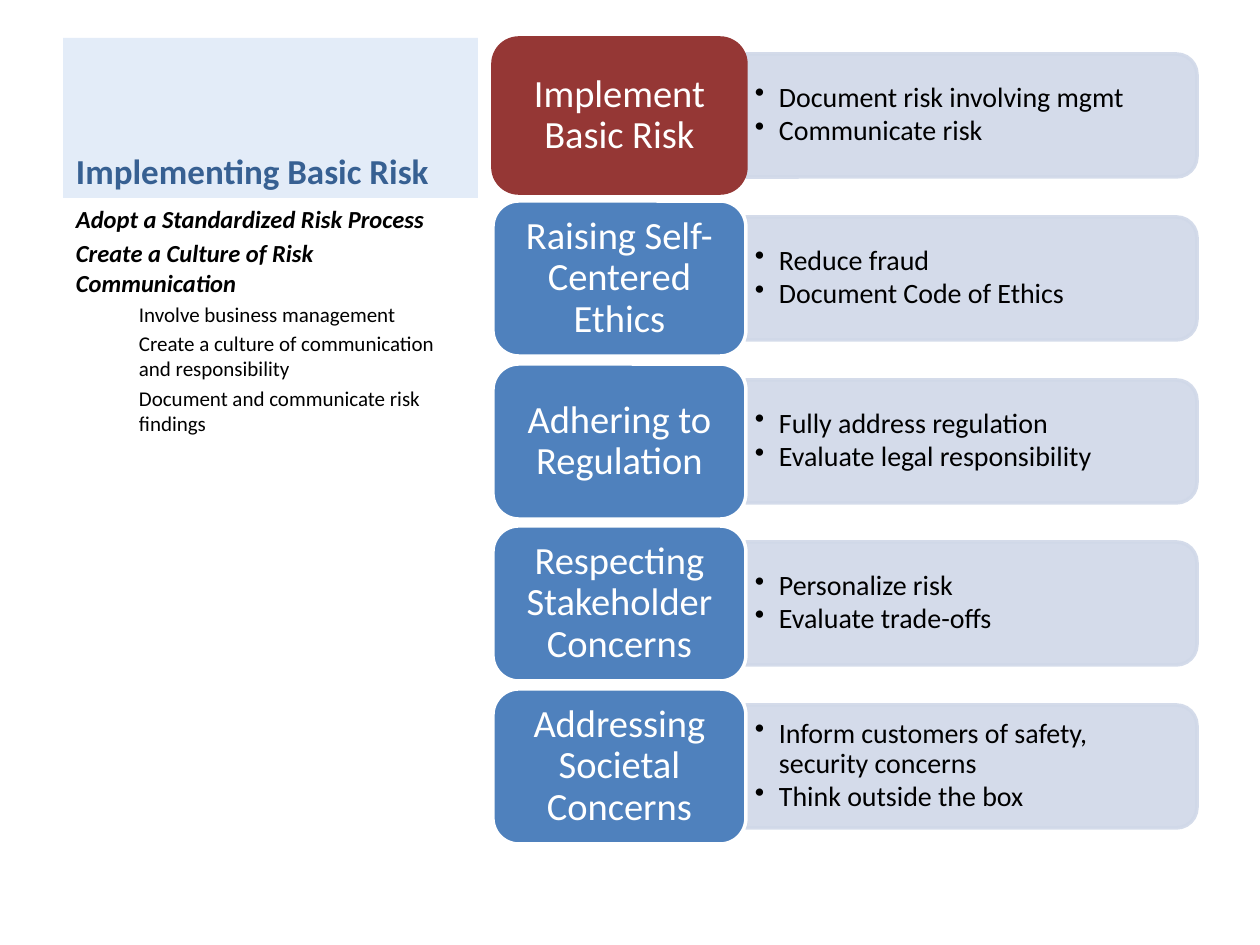
import pptx
import pptx.dml.color
import pptx.enum.shapes
import pptx.enum.text
import pptx.oxml.ns
import pptx.oxml.xmlchemy
import pptx.util

COLOURS = {
    "title_fill": "E3ECF8", "title": "376092", "panel": "D0D8E8",
    "active": "953735", "step": "4F81BD", "white": "FFFFFF", "black": "000000",
}
TITLE = "Implementing Basic Risk"
STEPS = [
    ("Implement Basic Risk", ["Document risk involving mgmt", "Communicate risk"]),
    ("Raising Self-Centered Ethics", ["Reduce fraud", "Document Code of Ethics"]),
    ("Adhering to Regulation", ["Fully address regulation", "Evaluate legal responsibility"]),
    ("Respecting Stakeholder Concerns", ["Personalize risk", "Evaluate trade-offs"]),
    ("Addressing Societal Concerns",
     ["Inform customers of safety, security concerns", "Think outside the box"]),
]
HEADINGS = ["Adopt a Standardized Risk Process", "Create a Culture of Risk Communication"]
DETAILS = [
    "Involve business management",
    "Create a culture of communication and responsibility",
    "Document and communicate risk findings",
]
ROW_TOP, ROW_PITCH = 38, 162.8
LABEL_LEFT, LABEL_WIDTH, LABEL_HEIGHT = 493, 253, 155
PANEL_LEFT, PANEL_WIDTH, PANEL_HEIGHT = 746, 451, 123


def px(length):
    return pptx.util.Emu(round(length * 914400 / 126))


def rgb(name):
    return pptx.dml.color.RGBColor.from_string(COLOURS[name])


def add_element(parent, tag, attribute, value):
    element = pptx.oxml.xmlchemy.OxmlElement(tag)
    element.set(attribute, value)
    parent.append(element)


class SlideBuilder:
    font = "Calibri"

    def __init__(self, slide):
        self.slide = slide

    def format_text(self, paragraph, size, colour, bold=False, italic=False):
        for run in paragraph.runs:
            font = run.font
            font.name, font.size = self.font, pptx.util.Pt(size)
            font.bold, font.italic = bold, italic
            font.color.rgb = rgb(colour)

    def set_frame(self, frame, anchor, margins):
        frame.word_wrap = True
        frame.auto_size = pptx.enum.text.MSO_AUTO_SIZE.NONE
        frame.vertical_anchor = anchor
        frame.margin_left = frame.margin_right = px(margins[0])
        frame.margin_top = frame.margin_bottom = px(margins[1])

    def title(self, text, left, top, width, height):
        shape = self.slide.shapes.title
        shape.left, shape.top = px(left), px(top)
        shape.width, shape.height = px(width), px(height)
        shape.fill.solid()
        shape.fill.fore_color.rgb = rgb("title_fill")
        frame = shape.text_frame
        frame.text = text
        self.set_frame(frame, pptx.enum.text.MSO_ANCHOR.BOTTOM, (13, 6))
        frame.paragraphs[0].alignment = pptx.enum.text.PP_ALIGN.LEFT
        self.format_text(frame.paragraphs[0], 20, "title", bold=True)

    def shape(self, kind, left, top, width, height, fill, line):
        shape = self.slide.shapes.add_shape(kind, px(left), px(top), px(width), px(height))
        shape.shadow.inherit = False
        shape.fill.solid()
        shape.fill.fore_color.rgb = rgb(fill)
        shape.line.color.rgb = rgb(line)
        shape.line.width = pptx.util.Pt(2)
        return shape

    def panel(self, left, top, width, height):
        # The rounded end faces right, so the shape is laid out upright and turned
        shape = self.shape(pptx.enum.shapes.MSO_SHAPE.ROUND_2_SAME_RECTANGLE,
                           left + (width - height) / 2, top + (height - width) / 2,
                           height, width, "panel", "panel")
        shape.rotation = 90
        for colour in list(shape._element.spPr.iter(pptx.oxml.ns.qn("a:srgbClr"))):
            add_element(colour, "a:alpha", "val", "90000")

    def label(self, text, left, top, width, height, fill, line):
        shape = self.shape(pptx.enum.shapes.MSO_SHAPE.ROUNDED_RECTANGLE,
                           left, top, width, height, fill, line)
        frame = shape.text_frame
        frame.text = text
        self.set_frame(frame, pptx.enum.text.MSO_ANCHOR.MIDDLE, (11, 6))
        paragraph = frame.paragraphs[0]
        paragraph.alignment = pptx.enum.text.PP_ALIGN.CENTER
        paragraph.line_spacing = 0.9
        self.format_text(paragraph, 22, "white")

    def text_box(self, lines, left, top, width, height, anchor, margins):
        box = self.slide.shapes.add_textbox(px(left), px(top), px(width), px(height))
        frame = box.text_frame
        frame.text = "\n".join(lines)
        self.set_frame(frame, anchor, margins)
        return frame.paragraphs

    def bullets(self, lines, left, top, width, height):
        for paragraph in self.text_box(lines, left, top, width, height,
                                       pptx.enum.text.MSO_ANCHOR.MIDDLE, (9, 4)):
            paragraph.line_spacing = 0.9
            paragraph.space_after = pptx.util.Pt(2)
            properties = paragraph._p.get_or_add_pPr()
            properties.set("marL", str(px(24)))
            properties.set("indent", str(px(-24)))
            add_element(properties, "a:buChar", "char", "•")
            self.format_text(paragraph, 16, "black")

    def outline(self, headings, details, left, top, width, height):
        paragraphs = self.text_box(headings + details, left, top, width, height,
                                   pptx.enum.text.MSO_ANCHOR.TOP, (13, 6))
        for index, paragraph in enumerate(paragraphs):
            heading = index < len(headings)
            size = 14 if heading else 12
            paragraph.space_before = pptx.util.Pt(size * 0.2)
            if not heading:
                paragraph.level = 1
                paragraph._p.get_or_add_pPr().set("marL", str(px(63)))
            self.format_text(paragraph, size, "black", bold=heading, italic=heading)


def main():
    presentation = pptx.Presentation()
    presentation.slide_width, presentation.slide_height = px(1260), px(945)
    builder = SlideBuilder(presentation.slides.add_slide(presentation.slide_layouts[5]))

    # Left column: title and outline
    builder.title(TITLE, 63, 38, 415, 160)
    builder.outline(HEADINGS, DETAILS, 63, 198, 415, 646)

    # Right column: one row per step, the first one highlighted
    for index, (name, points) in enumerate(STEPS):
        top = round(ROW_TOP + index * ROW_PITCH)
        fill, line = ("active", "active") if index == 0 else ("step", "white")
        builder.panel(PANEL_LEFT, top + (LABEL_HEIGHT - PANEL_HEIGHT) // 2,
                      PANEL_WIDTH, PANEL_HEIGHT)
        builder.bullets(points, PANEL_LEFT, top + 21, 445, 112)
        builder.label(name, LABEL_LEFT, top, LABEL_WIDTH, LABEL_HEIGHT, fill, line)

    presentation.save("out.pptx")


if __name__ == "__main__":
    main()
